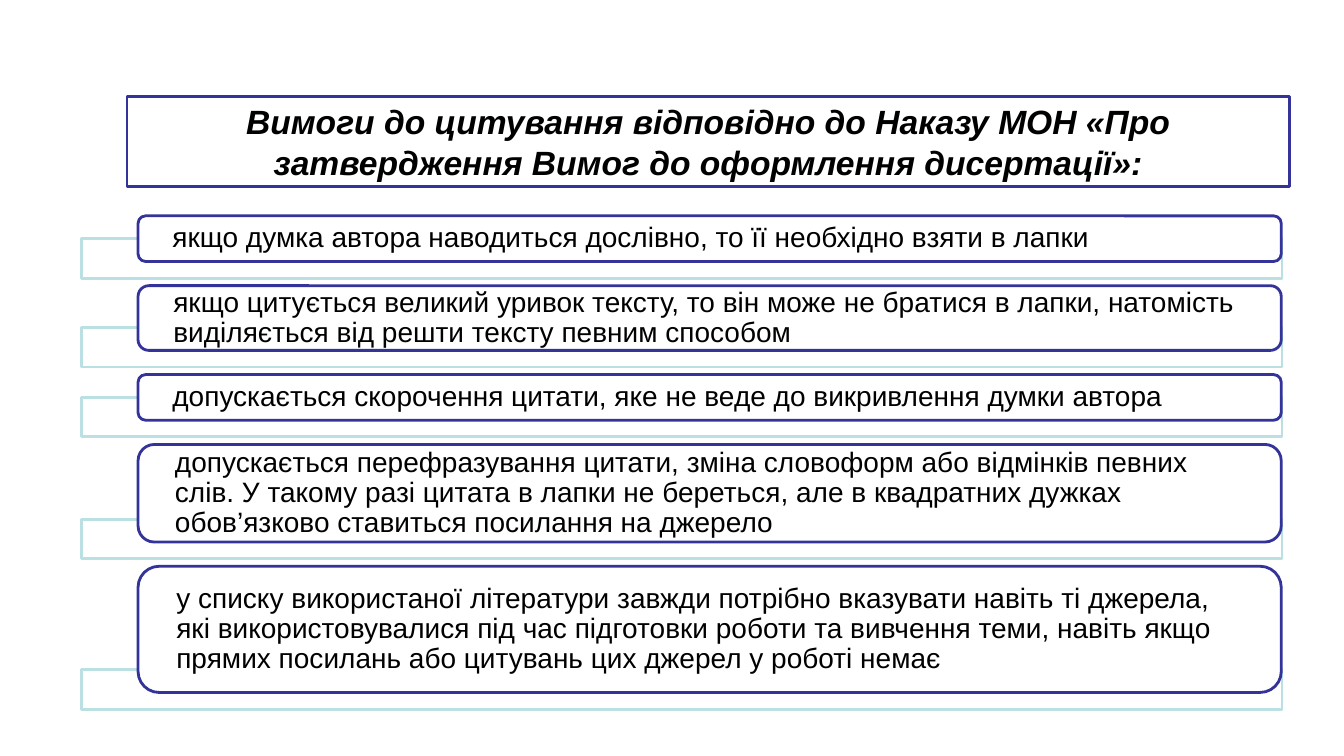
from pptx import Presentation
from pptx.dml.color import RGBColor
from pptx.enum.shapes import MSO_SHAPE as Shape
from pptx.enum.text import MSO_ANCHOR as Anchor, MSO_AUTO_SIZE as AutoSize, PP_ALIGN as Align
from pptx.oxml import parse_xml
from pptx.oxml.ns import nsdecls, qn
from pptx.util import Cm, Pt
from lxml.etree import SubElement

HEADING = "Вимоги до цитування відповідно до Наказу МОН «Про затвердження Вимог до оформлення дисертації»:"
RULES = [
    ("якщо думка автора наводиться дослівно, то її необхідно взяти в лапки", 1.15),
    ("якщо цитується великий уривок тексту, то він може не братися в лапки, "
     "натомість виділяється від решти тексту певним способом", 1.63),
    ("допускається скорочення цитати, яке не веде до викривлення думки автора", 1.15),
    ("допускається перефразування цитати, зміна словоформ або відмінків певних слів. "
     "У такому разі цитата в лапки не береться, але в квадратних дужках "
     "обов’язково ставиться посилання на джерело", 2.46),
    ("у списку використаної літератури завжди потрібно вказувати навіть ті джерела, "
     "які використовувалися під час підготовки роботи та вивчення теми, "
     "навіть якщо прямих посилань або цитувань цих джерел у роботі немає", 3.18),
]
COLORS = {"paper": "FFFFFF", "ink": "000000", "frame": "333399", "shelf": "BBE0E3"}

HEADING_PLACE = (3.2, 2.44, 29.29, 2.26)
RULE_LEFT, RULE_WIDTH, FIRST_TOP, GAP = 3.48, 28.81, 5.44, 0.61
SHELF_LEFT, SHELF_WIDTH, SHELF_HEIGHT, SHELF_OVERLAP = 2.06, 30.25, 0.99, 0.57


def color(name):
    return RGBColor.from_string(COLORS[name])


def paint(shape, line):
    shape.fill.solid()
    shape.fill.fore_color.rgb = color("paper")
    shape.line.color.rgb = color(line)
    shape.line.width = Pt(2)


def add_box(slide, kind, place, line):
    box = slide.shapes.add_shape(kind, *map(Cm, place))
    box.shadow.inherit = False
    paint(box, line)
    return box


def write(shape, text, size, align=Align.LEFT, spacing=1.0, bold=False, italic=False, inset=None):
    frame = shape.text_frame
    frame.word_wrap = True
    frame.auto_size = AutoSize.NONE
    frame.vertical_anchor = Anchor.MIDDLE
    if inset is not None:
        frame.margin_left = frame.margin_right = Cm(inset)
        frame.margin_top = frame.margin_bottom = 0
    para = frame.paragraphs[0]
    para.alignment = align
    para.line_spacing = spacing
    span = para.add_run()
    span.text = text
    span.font.name = "Arial"
    span.font.size = Pt(size)
    span.font.bold = bold
    span.font.italic = italic
    span.font.color.rgb = color("ink")


def add_heading(slide):
    title = slide.shapes.title
    title.left, title.top, title.width, title.height = map(Cm, HEADING_PLACE)
    title._element.spPr.append(parse_xml(
        f'<a:prstGeom {nsdecls("a")} prst="round2DiagRect"><a:avLst>'
        '<a:gd name="adj1" fmla="val 50000"/><a:gd name="adj2" fmla="val 0"/>'
        '</a:avLst></a:prstGeom>'))
    paint(title, "frame")
    write(title, HEADING, 24, align=Align.CENTER, bold=True, italic=True)


def add_rules(slide):
    top = FIRST_TOP
    for text, height in RULES:
        bottom = top + height
        shelf = add_box(slide, Shape.RECTANGLE,
                        (SHELF_LEFT, bottom - SHELF_OVERLAP, SHELF_WIDTH, SHELF_HEIGHT), "shelf")
        paper = shelf._element.spPr.find(qn("a:solidFill"))[0]
        SubElement(paper, qn("a:alpha"), val="90000")
        box = add_box(slide, Shape.ROUNDED_RECTANGLE,
                      (RULE_LEFT, top, RULE_WIDTH, height), "frame")
        write(box, text, 20, spacing=0.9, inset=0.81)
        top = bottom + GAP


def main():
    deck = Presentation()
    deck.slide_width, deck.slide_height = Cm(33.87), Cm(19.05)
    page = deck.slides.add_slide(deck.slide_layouts[5])
    add_heading(page)
    add_rules(page)
    deck.save("out.pptx")


if __name__ == "__main__":
    main()
